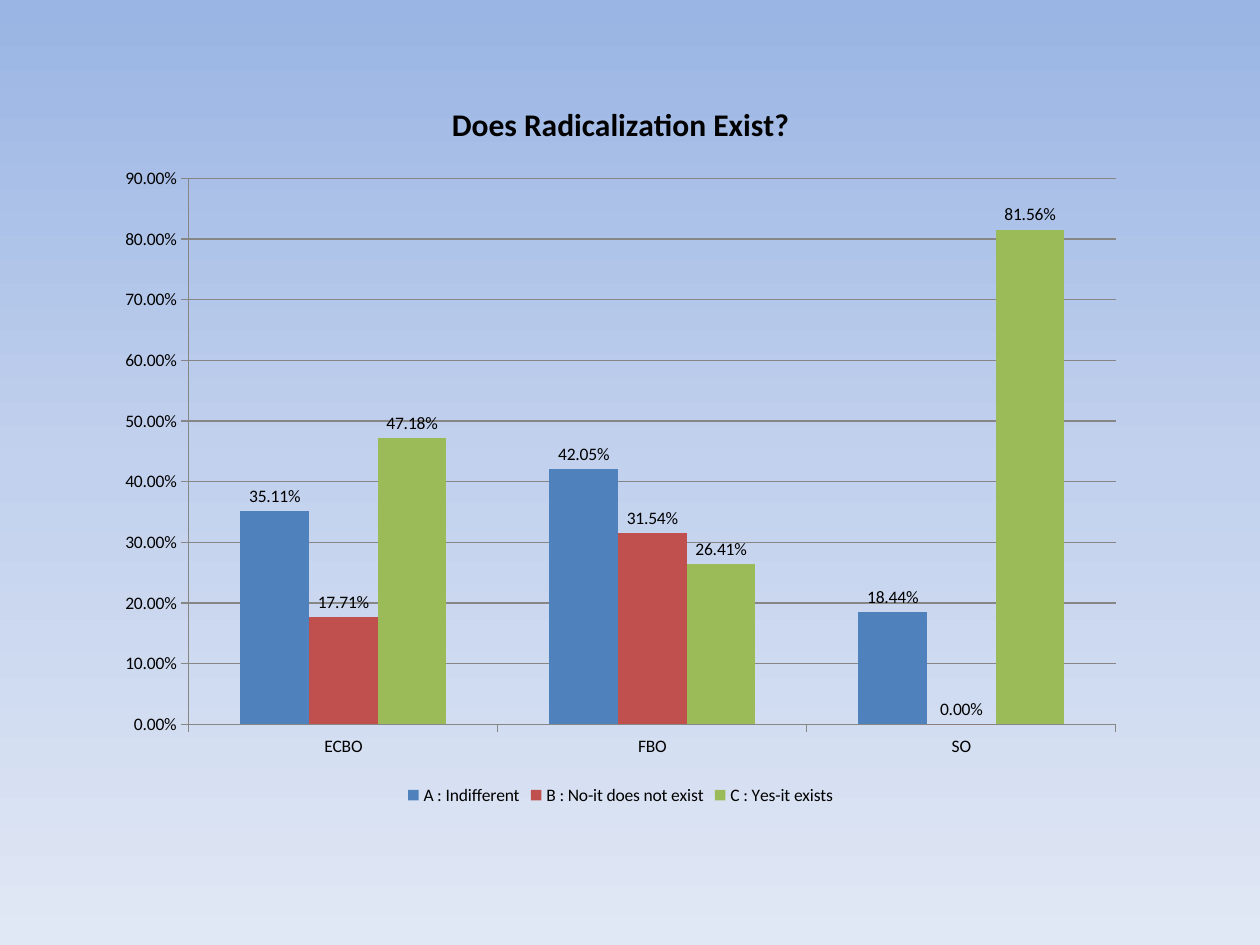
from copy import deepcopy
from dataclasses import dataclass

from pptx import Presentation
from pptx.chart.data import CategoryChartData
from pptx.dml.color import RGBColor
from pptx.enum.chart import XL_CHART_TYPE, XL_LABEL_POSITION, XL_LEGEND_POSITION, XL_TICK_MARK
from pptx.oxml.ns import qn
from pptx.util import Cm, Pt


@dataclass(frozen=True)
class Theme:
    font: str = "Calibri"
    text: str = "000000"
    line: str = "868686"
    text_size: int = 10
    title_size: int = 18
    background: tuple = ("9AB5E4", "C2D1ED", "E1E8F5")
    series: tuple = ("4F81BD", "C0504D", "9BBB59")


theme = Theme()
PERCENT = "0.00%"


def style_font(font, size, bold=False):
    font.name = theme.font
    font.size = Pt(size)
    font.bold = bold
    font.color.rgb = RGBColor.from_string(theme.text)


prs = Presentation()
prs.slide_width, prs.slide_height = Cm(25.4), Cm(19.05)
s = prs.slides.add_slide(prs.slide_layouts[6])

# Background gradient, top to bottom
fill = s.background.fill
fill.gradient()
fill.gradient_angle = 270
stop_list = next(s._element.iter(qn("a:gsLst")))
stop_list.append(deepcopy(stop_list[-1]))
for i, (stop, color) in enumerate(zip(fill.gradient_stops, theme.background)):
    stop.position = i / 2
    stop.color.rgb = RGBColor.from_string(color)

# Survey chart
data = CategoryChartData(number_format=PERCENT)
data.categories = ["ECBO", "FBO", "SO"]
data.add_series("A : Indifferent", (0.3511, 0.4205, 0.1844))
data.add_series("B : No-it does not exist", (0.1771, 0.3154, 0))
data.add_series("C : Yes-it exists", (0.4718, 0.2641, 0.8156))
chart = s.shapes.add_chart(XL_CHART_TYPE.COLUMN_CLUSTERED, Cm(2.11), Cm(1.52),
                           Cm(20.8), Cm(14.81), data).chart
style_font(chart.font, theme.text_size)

chart.has_title = True
tf = chart.chart_title.text_frame
tf.text = "Does Radicalization Exist?"
style_font(tf.paragraphs[0].runs[0].font, theme.title_size, bold=True)
chart.chart_title.include_in_layout = False

chart.has_legend = True
chart.legend.position = XL_LEGEND_POSITION.BOTTOM
chart.legend.include_in_layout = False

# Axes and gridlines
value_axis, category_axis = chart.value_axis, chart.category_axis
value_axis.minimum_scale, value_axis.maximum_scale = 0, 0.9
value_axis.major_unit = 0.1
value_axis.has_major_gridlines = True
value_axis.tick_labels.number_format = PERCENT
value_axis.tick_labels.number_format_is_linked = False
for axis in (value_axis, category_axis):
    axis.major_tick_mark = XL_TICK_MARK.OUTSIDE
for part in (value_axis, category_axis, value_axis.major_gridlines):
    part.format.line.color.rgb = RGBColor.from_string(theme.line)
    part.format.line.width = Pt(0.75)

# Columns and their labels
plot = chart.plots[0]
plot.gap_width, plot.overlap = 150, 0
plot.vary_by_categories = False
for series, color in zip(plot.series, theme.series):
    series.format.fill.solid()
    series.format.fill.fore_color.rgb = RGBColor.from_string(color)
    labels = series.data_labels
    labels.show_value = True
    labels.number_format = PERCENT
    labels.number_format_is_linked = False
    labels.position = XL_LABEL_POSITION.OUTSIDE_END
    style_font(labels.font, theme.text_size)

prs.save("out.pptx")
